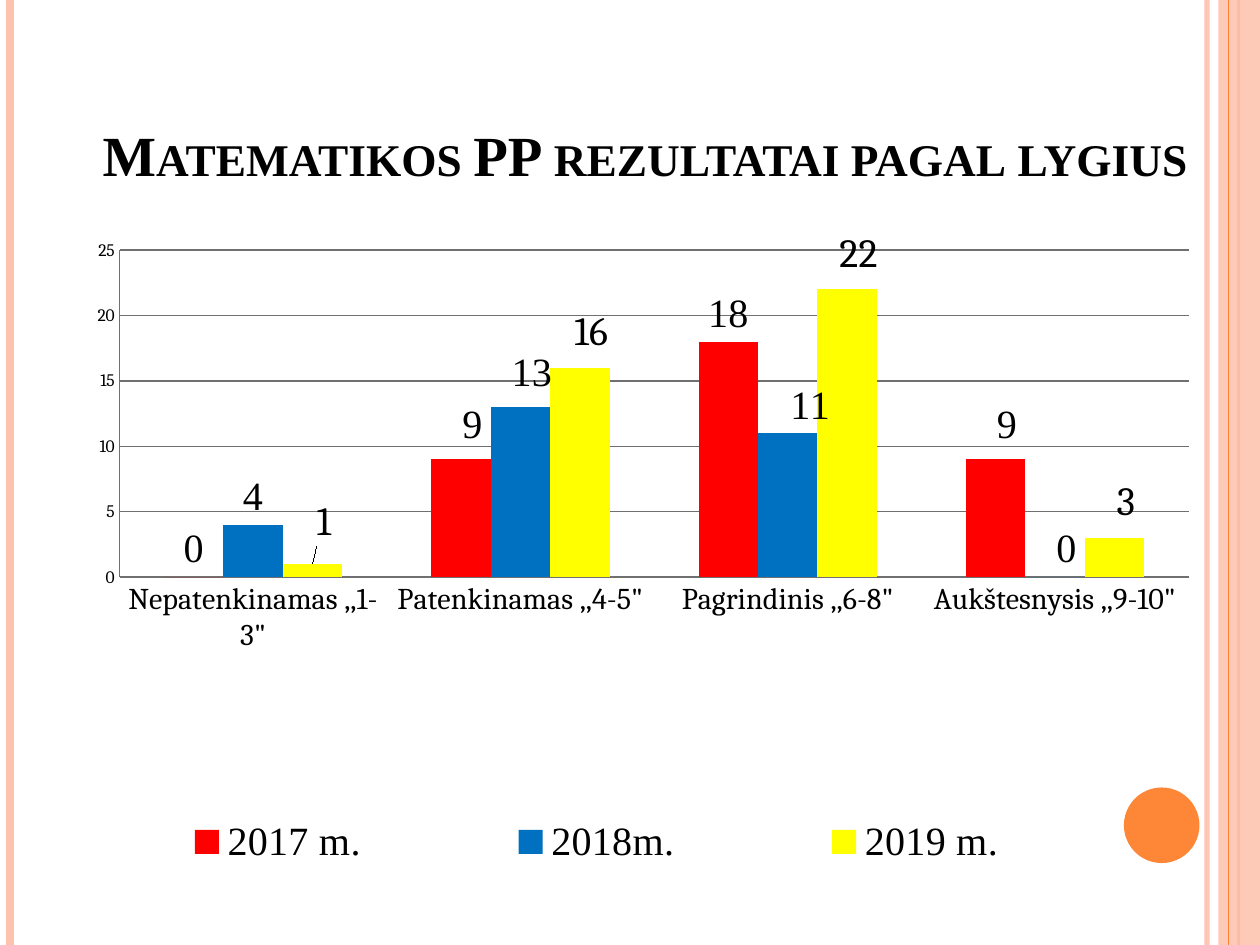
from lxml import etree
from pptx import Presentation
from pptx.chart.data import CategoryChartData
from pptx.dml.color import RGBColor
from pptx.enum.chart import XL_CHART_TYPE as ChartType, XL_LABEL_POSITION as LabelPosition
from pptx.enum.chart import XL_LEGEND_POSITION as LegendPosition, XL_TICK_MARK as TickMark
from pptx.enum.shapes import MSO_CONNECTOR as Connector, MSO_SHAPE as Shape
from pptx.enum.text import MSO_ANCHOR as Anchor, MSO_AUTO_SIZE as AutoSize, PP_ALIGN as Align
from pptx.oxml import parse_xml
from pptx.oxml.ns import nsdecls, qn
from pptx.util import Inches, Pt

BLACK = RGBColor(0x00, 0x00, 0x00)
GREY = RGBColor(0x70, 0x70, 0x70)
ORANGE = RGBColor(0xFE, 0x86, 0x37)
PEACH = RGBColor(0xFE, 0xC3, 0xAE)
RED = RGBColor(0xFF, 0x00, 0x00)
BLUE = RGBColor(0x00, 0x70, 0xC0)
YELLOW = RGBColor(0xFF, 0xFF, 0x00)

SERIF = "Times New Roman"
CAMBRIA = "Cambria"
LABEL_SIZE = 22.9

CATEGORIES = ['Nepatenkinamas ,,1-3"', 'Patenkinamas ,,4-5"',
              'Pagrindinis ,,6-8"', 'Aukštesnysis ,,9-10"']
SERIES = [
    ("2017 m.", (0, 9, 18, 9), RED, SERIF, {1: (0.01, -0.01), 3: (0.01, -0.01)}),
    ("2018m.", (4, 13, 11, 0), BLUE, SERIF,
     {0: (0, 0), 1: (0.01, -0.01), 2: (0.02, 0), 3: (0.01, 0)}),
    ("2019 m.", (1, 16, 22, 3), YELLOW, CAMBRIA,
     {0: (0.01, -0.02), 1: (0.01, -0.01), 2: (0.01, -0.01), 3: (0.01, -0.01)}),
]


def style_font(font, size, name, color=BLACK, bold=False):
    """Set the size, face, colour and weight of a font."""
    font.size = Pt(size)
    font.name = name
    font.bold = bold
    font.color.rgb = color


def write_text(text_frame, text, size, name, align=Align.CENTER, small_caps=False, **style):
    """Write one formatted paragraph into a text frame."""
    paragraph = text_frame.paragraphs[0]
    paragraph.alignment = align
    run = paragraph.add_run()
    run.text = text
    style_font(run.font, size, name, **style)
    if small_caps:
        run.font._element.set("cap", "small")


def set_alpha(fill_parent, percent):
    """Make the solid colour inside an element partly transparent."""
    color = fill_parent.find(".//" + qn("a:srgbClr"))
    etree.SubElement(color, qn("a:alpha")).set("val", str(percent * 1000))


def add_stripe(slide, x, color, width, alpha=100):
    """Draw a vertical line over the full slide height."""
    line = slide.shapes.add_connector(
        Connector.STRAIGHT, Inches(x), Inches(0), Inches(x), Inches(7.5))
    line.line.color.rgb = color
    line.line.width = Pt(width)
    properties = line._element.spPr
    if alpha < 100:
        set_alpha(properties, alpha)
    etree.SubElement(properties, qn("a:effectLst"))


def add_block(slide, kind, left, top, width, height, color, alpha=100):
    """Draw a filled shape without an outline."""
    shape = slide.shapes.add_shape(
        kind, Inches(left), Inches(top), Inches(width), Inches(height))
    shape.shadow.inherit = False
    shape.fill.solid()
    shape.fill.fore_color.rgb = color
    shape.line.fill.background()
    if alpha < 100:
        set_alpha(shape._element.spPr, alpha)


def add_title(slide, text):
    """Place and fill the title placeholder."""
    title = slide.shapes.title
    title.left, title.top = Inches(0.47), Inches(0.62)
    title.width, title.height = Inches(9.3), Inches(0.92)
    frame = title.text_frame
    frame.auto_size = AutoSize.NONE
    frame.vertical_anchor = Anchor.BOTTOM
    write_text(frame, text, 32.4, SERIF, bold=True, small_caps=True)


def make_layout(target="", **fractions):
    """Return a manual chart layout element."""
    modes = "" if not target else '<c:xMode val="edge"/><c:yMode val="edge"/>'
    inner = '<c:layoutTarget val="inner"/>' if target == "inner" else ""
    sizes = "".join(f'<c:{key} val="{value}"/>' for key, value in fractions.items())
    return parse_xml(f'<c:layout {nsdecls("c")}><c:manualLayout>'
                     f'{inner}{modes}{sizes}</c:manualLayout></c:layout>')


def place(element, layout, after=None):
    """Replace the layout of a chart element."""
    for old in element.findall(qn("c:layout")):
        element.remove(old)
    if after is None:
        element.insert(0, layout)
    else:
        element.find(qn(after)).addnext(layout)


def format_series(series, values, color, label_font, offsets):
    """Colour a series and set its value labels."""
    series.format.fill.solid()
    series.format.fill.fore_color.rgb = color
    series.invert_if_negative = False
    labels = series.data_labels
    labels.show_value = True
    labels.position = LabelPosition.OUTSIDE_END
    style_font(labels.font, LABEL_SIZE, label_font)
    for index, (x, y) in offsets.items():
        label = series.points[index].data_label
        if label_font == CAMBRIA:
            write_text(label.text_frame, str(values[index]), LABEL_SIZE, label_font)
        else:
            style_font(label.font, LABEL_SIZE, label_font)
        label.position = LabelPosition.OUTSIDE_END
        element = series._element.xpath(f'c:dLbls/c:dLbl[c:idx/@val="{index}"]')[0]
        place(element, make_layout(x=x, y=y), after="c:idx")


def format_axes(chart):
    """Format the axes and gridlines."""
    category, value = chart.category_axis, chart.value_axis
    for axis, size in ((category, 17.2), (value, 10)):
        axis.major_tick_mark = axis.minor_tick_mark = TickMark.NONE
        style_font(axis.tick_labels.font, size, CAMBRIA)
        axis.format.line.color.rgb = GREY
        axis.format.line.width = Pt(0.75)
    value.minimum_scale, value.maximum_scale, value.major_unit = 0, 25, 5
    value.has_major_gridlines = True
    value.major_gridlines.format.line.color.rgb = GREY
    value.major_gridlines.format.line.width = Pt(0.75)


def add_results_chart(slide):
    """Add the clustered columns of results by level."""
    data = CategoryChartData()
    data.categories = CATEGORIES
    for name, values, *_ in SERIES:
        data.add_series(name, values)
    chart = slide.shapes.add_chart(
        ChartType.COLUMN_CLUSTERED, Inches(0.31), Inches(1.83),
        Inches(9.13), Inches(5.19), data).chart
    chart.has_title = False
    style_font(chart.font, 10, CAMBRIA)
    plot = chart.plots[0]
    plot.gap_width = 150
    plot.overlap = 0
    plot.vary_by_categories = False
    for series, (_, values, color, label_font, offsets) in zip(plot.series, SERIES):
        format_series(series, values, color, label_font, offsets)
    format_axes(chart)
    chart.has_legend = True
    legend = chart.legend
    legend.position = LegendPosition.RIGHT
    legend.include_in_layout = False
    style_font(legend.font, LABEL_SIZE, SERIF)
    place(legend._element, make_layout("edge", x=0.01, y=0.88, w=0.95, h=0.11),
          after="c:legendPos")
    place(chart._chartSpace.chart.plotArea,
          make_layout("inner", x=0.07, y=0.03, w=0.93, h=0.5))


def main():
    """Build and save the presentation."""
    presentation = Presentation()
    presentation.slide_width, presentation.slide_height = Inches(10), Inches(7.5)
    slide = presentation.slides.add_slide(presentation.slide_layouts[5])
    add_stripe(slide, 9.58, PEACH, 3, alpha=93)
    add_stripe(slide, 0.08, PEACH, 4.5)
    add_stripe(slide, 9.83, ORANGE, 1.5)
    add_block(slide, Shape.RECTANGLE, 9.67, 0, 0.33, 7.5, PEACH, alpha=87)
    add_stripe(slide, 9.75, ORANGE, 0.75)
    add_block(slide, Shape.OVAL, 8.92, 6.25, 0.6, 0.6, ORANGE)
    add_title(slide, "Matematikos PP rezultatai pagal lygius")
    add_results_chart(slide)
    presentation.save("out.pptx")


if __name__ == "__main__":
    main()
